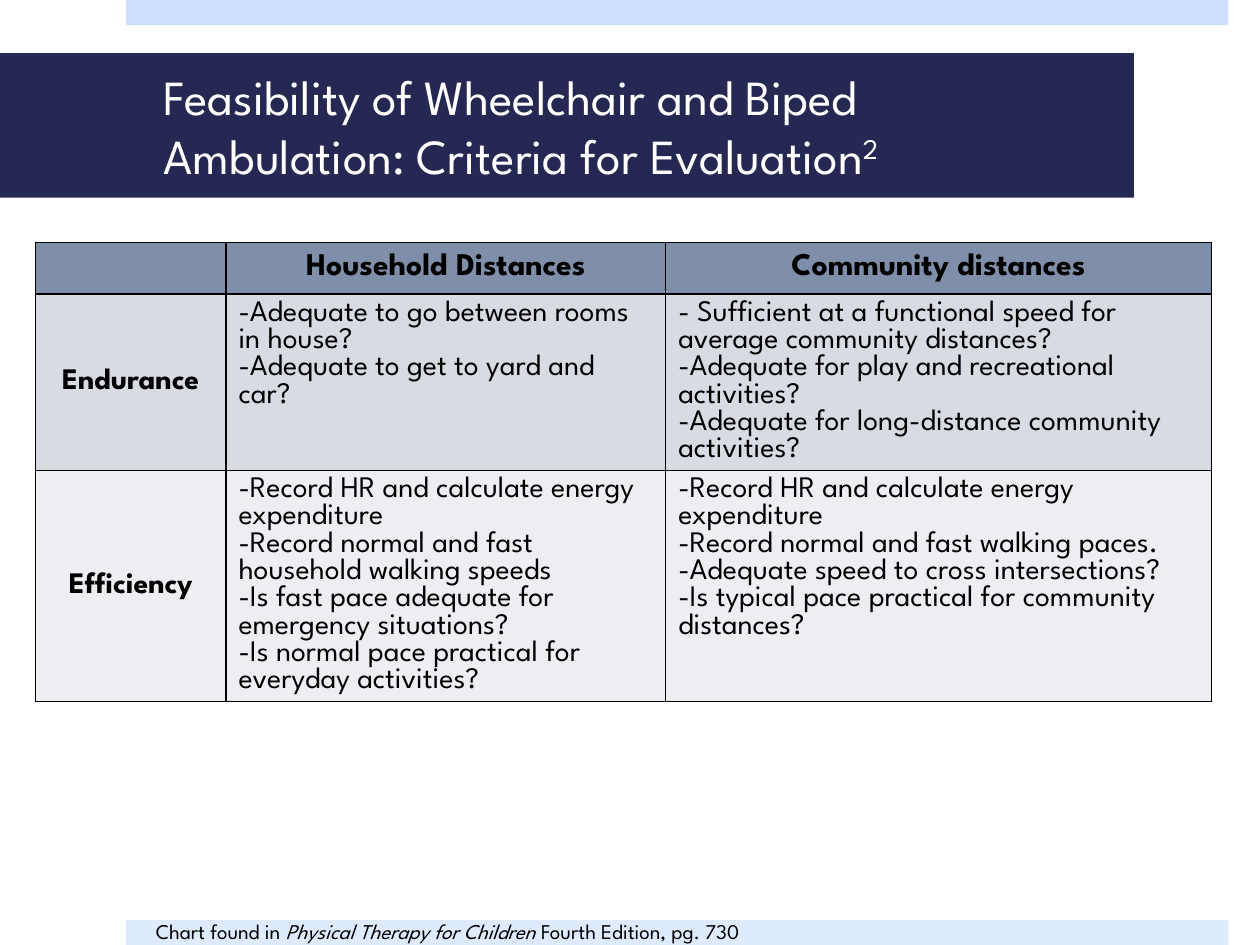
from pptx import Presentation
from pptx.dml.color import RGBColor
from pptx.enum.shapes import MSO_SHAPE
from pptx.enum.text import MSO_ANCHOR, PP_ALIGN
from pptx.oxml import parse_xml
from pptx.oxml.ns import nsdecls
from pptx.util import Pt

FONT = "League Spartan"
WHITE = RGBColor(0xFF, 0xFF, 0xFF)
BLACK = RGBColor(0x00, 0x00, 0x00)
NAVY = RGBColor(0x24, 0x28, 0x52)
TOP_BLUE = RGBColor(0xCD, 0xE0, 0xFB)
BOTTOM_BLUE = RGBColor(0xDE, 0xEA, 0xFD)
HEADER_FILL = RGBColor(0x7F, 0x8F, 0xA9)
ENDURANCE_FILL = RGBColor(0xD8, 0xDB, 0xE2)
EFFICIENCY_FILL = RGBColor(0xEC, 0xEE, 0xF1)

COLUMN_WIDTHS = (108.7, 251.3, 311.8)
ROW_HEIGHTS = (29.5, 100.8, 132)
HEADINGS = ("Household Distances", "Community distances")
CRITERIA = (
    ("Endurance", ENDURANCE_FILL, (
        ("-Adequate to go between rooms in house?",
         "-Adequate to get to yard and car?"),
        ("- Sufficient at a functional speed for average community distances?",
         "-Adequate for play and recreational activities?",
         "-Adequate for long-distance community activities?"))),
    ("Efficiency", EFFICIENCY_FILL, (
        ("-Record HR and calculate energy expenditure",
         "-Record normal and fast household walking speeds",
         "-Is fast pace adequate for emergency situations?",
         "-Is normal pace practical for everyday activities?"),
        ("-Record HR and calculate energy expenditure",
         "-Record normal and fast walking paces.",
         "-Adequate speed to cross intersections?",
         "-Is typical pace practical for community distances?"))),
)


def add_run(paragraph, text, size, color=BLACK, bold=False, italic=False):
    run = paragraph.add_run()
    run.text = text
    font = run.font
    font.name, font.size, font.bold, font.italic = FONT, Pt(size), bold, italic
    font.color.rgb = color
    return run


def add_band(slide, left, top, width, height, fill):
    band = slide.shapes.add_shape(
        MSO_SHAPE.RECTANGLE, Pt(left), Pt(top), Pt(width), Pt(height))
    band.shadow.inherit = False
    band.fill.solid()
    band.fill.fore_color.rgb = fill
    band.line.fill.background()
    return band


def add_title(slide, left, top, width, height):
    frame = add_band(slide, left, top, width, height, NAVY).text_frame
    frame.word_wrap = True
    frame.vertical_anchor = MSO_ANCHOR.MIDDLE
    frame.margin_left, frame.margin_right = Pt(93.6), Pt(21.6)
    frame.margin_top = frame.margin_bottom = Pt(3.6)
    heading = frame.paragraphs[0]
    heading.alignment = PP_ALIGN.LEFT
    add_run(heading, "Feasibility of Wheelchair and Biped Ambulation: "
                     "Criteria for Evaluation", 28, WHITE)
    reference = add_run(heading, "2", 28, WHITE)
    reference.font._element.set("baseline", "30000")


def style_cell(cell, fill):
    cell.fill.solid()
    cell.fill.fore_color.rgb = fill
    # Borders come before the fill in the cell properties
    properties = cell._tc.get_or_add_tcPr()
    for position, side in enumerate(("lnL", "lnR", "lnT", "lnB")):
        properties.insert(position, parse_xml(
            f'<a:{side} {nsdecls("a")} w="12700"><a:solidFill>'
            f'<a:srgbClr val="{BLACK}"/></a:solidFill></a:{side}>'))


def fill_label(cell, text, size):
    cell.vertical_anchor = MSO_ANCHOR.MIDDLE
    label = cell.text_frame.paragraphs[0]
    label.alignment = PP_ALIGN.CENTER
    add_run(label, text, size, bold=True)


def fill_questions(cell, questions):
    frame = cell.text_frame
    for index, question in enumerate(questions):
        line = frame.add_paragraph() if index else frame.paragraphs[0]
        add_run(line, question, 17)


def add_criteria_table(slide, left, top):
    table = slide.shapes.add_table(
        len(ROW_HEIGHTS), len(COLUMN_WIDTHS), Pt(left), Pt(top),
        Pt(sum(COLUMN_WIDTHS)), Pt(sum(ROW_HEIGHTS))).table
    for column, width in zip(table.columns, COLUMN_WIDTHS):
        column.width = Pt(width)
    for row, height in zip(table.rows, ROW_HEIGHTS):
        row.height = Pt(height)

    # Header row
    for cell in table.rows[0].cells:
        style_cell(cell, HEADER_FILL)
    for column, heading in enumerate(HEADINGS, 1):
        fill_label(table.cell(0, column), heading, 18)

    # One row for each criterion
    for row, (criterion, fill, answers) in enumerate(CRITERIA, 1):
        for cell in table.rows[row].cells:
            style_cell(cell, fill)
        fill_label(table.cell(row, 0), criterion, 17)
        for column, questions in enumerate(answers, 1):
            fill_questions(table.cell(row, column), questions)


def add_source_note(slide, left, top, width, height):
    frame = slide.shapes.add_textbox(
        Pt(left), Pt(top), Pt(width), Pt(height)).text_frame
    frame.word_wrap = False
    note = frame.paragraphs[0]
    note.alignment = PP_ALIGN.JUSTIFY
    add_run(note, "Chart found in ", 12)
    add_run(note, "Physical Therapy for Children ", 12, italic=True)
    add_run(note, "Fourth Edition, pg. 730", 12)


def main():
    deck = Presentation()
    deck.slide_width, deck.slide_height = Pt(720), Pt(540)
    slide = deck.slides.add_slide(deck.slide_layouts[6])
    add_band(slide, 72, 0, 630, 14.4, TOP_BLUE)
    add_band(slide, 72, 525.6, 630, 14.4, BOTTOM_BLUE)
    add_title(slide, 0, 30.4, 648, 82.6)
    add_criteria_table(slide, 20.4, 138.6)
    add_source_note(slide, 82, 521.5, 403, 21.8)
    deck.save("out.pptx")


if __name__ == "__main__":
    main()
